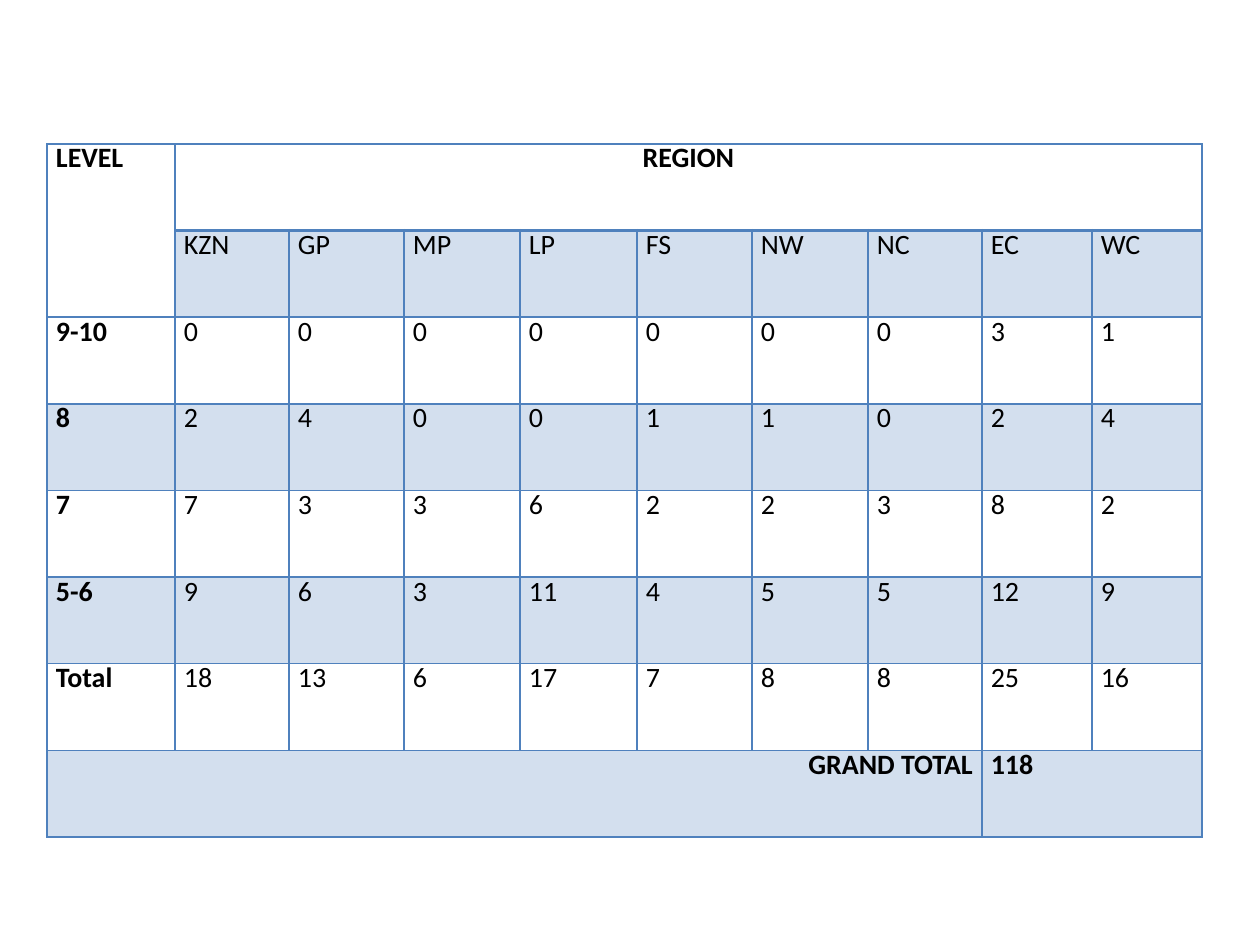
from lxml import etree
from pptx import Presentation, util as u
from pptx.dml.color import RGBColor
from pptx.enum import text
from pptx.oxml.ns import qn

SCALE = u.Inches(1) // 126
REGIONS = ["KZN", "GP", "MP", "LP", "FS", "NW", "NC", "EC", "WC"]
LEVELS = {
    "9-10": [0, 0, 0, 0, 0, 0, 0, 3, 1],
    "8": [2, 4, 0, 0, 1, 1, 0, 2, 4],
    "7": [7, 3, 3, 6, 2, 2, 3, 8, 2],
    "5-6": [9, 6, 3, 11, 4, 5, 5, 12, 9],
}
COLUMN_WIDTHS = [128, 114, 115, 116, 117, 115, 116, 114, 110, 110]
MERGES = [((0, 0), (1, 0)), ((0, 1), (0, 9)), ((7, 0), (7, 7)), ((7, 8), (7, 9))]


def px(length):
    return u.Emu(length * SCALE)


def color(value):
    return RGBColor.from_string(value)


class RegionSlide:
    """Holds the slide and the style of its level-by-region table."""

    ink, rule, band = "000000", "4F81BD", "D3DFEE"
    font = {"name": "Calibri", "size": u.Pt(16)}
    margins = {"margin_left": px(9), "margin_right": px(9), "margin_top": 0, "margin_bottom": 0}

    def __init__(self, deck):
        self.slide = deck.slides.add_slide(deck.slide_layouts[6])

    def border(self, cell, side, points):
        properties = cell._tc.get_or_add_tcPr()
        line = etree.SubElement(properties, qn(f"a:ln{side}"), w=str(u.Pt(points)))
        fill = etree.SubElement(line, qn("a:solidFill"))
        etree.SubElement(fill, qn("a:srgbClr"), val=self.rule)

    def cell(self, cell, content, bold, align, shaded, borders):
        for name, value in self.margins.items():
            setattr(cell, name, value)
        for side, points in borders.items():
            self.border(cell, side, points)
        if shaded:
            cell.fill.solid()
            cell.fill.fore_color.rgb = color(self.band)
        else:
            cell.fill.background()
        if content == "":
            return
        paragraph = cell.text_frame.paragraphs[0]
        paragraph.alignment = align
        paragraph.line_spacing = u.Pt(18)
        run = paragraph.add_run()
        run.text = str(content)
        for name, value in {**self.font, "bold": bold}.items():
            setattr(run.font, name, value)
        run.font.color.rgb = color(self.ink)

    def table(self, left, top, height, widths, rows, merges, alignments):
        frame = self.slide.shapes.add_table(
            len(rows), len(widths), px(left), px(top), px(sum(widths)), px(height))
        table = frame.table
        table.first_row = table.horz_banding = False
        for column, width in zip(table.columns, widths):
            column.width = px(width)
        for row in table.rows:
            row.height = px(height) // len(rows)
        for start, end in merges:
            table.cell(*start).merge(table.cell(*end))
        for r, row in enumerate(rows):
            for c, content in enumerate(row):
                borders = dict.fromkeys("LRTB", 1)
                if c and r < 2:
                    borders["TB"[r == 0]] = 2.25
                bold = c == 0 or r in (0, len(rows) - 1)
                align = alignments.get((r, c), text.PP_ALIGN.JUSTIFY)
                shaded = r % 2 == 1 and (r, c) != (1, 0)
                self.cell(table.cell(r, c), content, bold, align, shaded, borders)


def main():
    deck = Presentation()
    deck.slide_width, deck.slide_height = u.Inches(10), u.Inches(7.5)
    totals = [sum(counts) for counts in zip(*LEVELS.values())]
    rows = [
        ["LEVEL", "REGION"] + [""] * 8,
        [""] + REGIONS,
        *([level] + counts for level, counts in LEVELS.items()),
        ["Total"] + totals,
        ["GRAND TOTAL"] + [""] * 7 + [sum(totals), ""],
    ]
    alignments = {(0, 1): text.PP_ALIGN.CENTER, (7, 0): text.PP_ALIGN.RIGHT}
    RegionSlide(deck).table(47, 144, 693, COLUMN_WIDTHS, rows, MERGES, alignments)
    deck.save("out.pptx")


if __name__ == "__main__":
    main()
